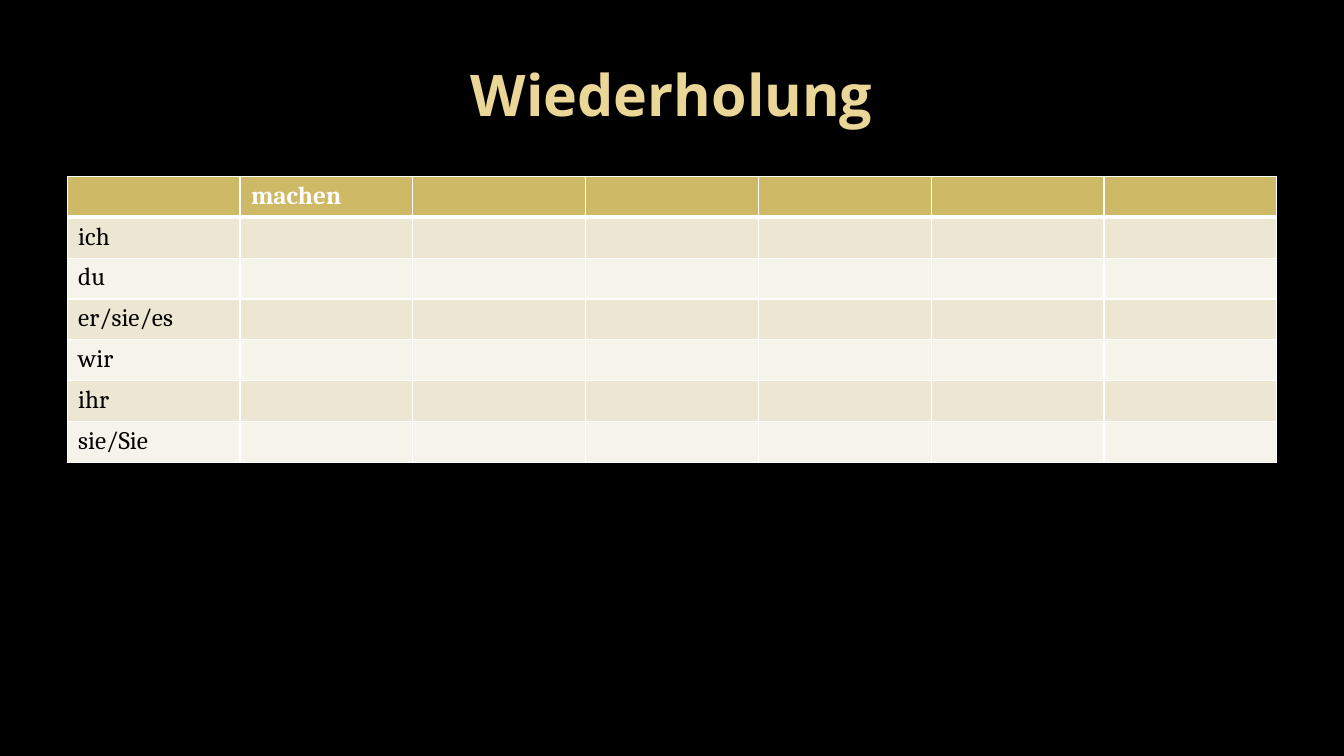
from dataclasses import dataclass

from lxml import etree
from pptx import Presentation
from pptx.dml.color import RGBColor
from pptx.enum import text
from pptx.oxml import ns
from pptx.util import Pt


@dataclass(frozen=True)
class Theme:
    background: str = "000000"
    title: str = "EAD696"
    header: str = "CEB966"
    bands: tuple = ("EDE6D3", "F6F3EA")
    header_text: str = "FFFFFF"
    body_text: str = "000000"
    grid: str = "FFFFFF"
    title_font: str = "Open Sans"
    table_font: str = "Cambria"
    title_size: int = 41
    table_size: int = 18


THEME = Theme()
VERBS = ["machen", "", "", "", "", ""]
PRONOUNS = ["ich", "du", "er/sie/es", "wir", "ihr", "sie/Sie"]


def style_font(font, name, size, color, bold):
    font.name = name
    font.size = Pt(size)
    font.bold = bold
    font.color.rgb = RGBColor.from_string(color)


def add_border(cell, side, width):
    line = etree.SubElement(cell._tc.get_or_add_tcPr(), ns.qn(f"a:ln{side}"), w=str(Pt(width)))
    fill = etree.SubElement(line, ns.qn("a:solidFill"))
    etree.SubElement(fill, ns.qn("a:srgbClr"), val=THEME.grid)


def place_title(slide, wording, left, top, width, height):
    title = slide.shapes.title
    title.left, title.top, title.width, title.height = map(Pt, (left, top, width, height))
    title.text_frame.text = wording
    title.text_frame.vertical_anchor = text.MSO_ANCHOR.MIDDLE
    heading = title.text_frame.paragraphs[0]
    heading.alignment = text.PP_ALIGN.CENTER
    style_font(heading.font, THEME.title_font, THEME.title_size, THEME.title, True)


def style_cell(cell, row):
    is_header = row == 0
    cell.margin_left = cell.margin_right = Pt(7.9)
    cell.margin_top = cell.margin_bottom = Pt(3.6)
    for side in "LRTB":
        under_header = (row, side) in ((0, "B"), (1, "T"))
        add_border(cell, side, 3 if under_header else 1)
    cell.fill.solid()
    band = THEME.header if is_header else THEME.bands[(row - 1) % 2]
    cell.fill.fore_color.rgb = RGBColor.from_string(band)
    color = THEME.header_text if is_header else THEME.body_text
    style_font(cell.text_frame.paragraphs[0].font, THEME.table_font, THEME.table_size, color, is_header)


def place_conjugation(slide, verbs, pronouns, left, top, width, height):
    rows = [["", *verbs]] + [[pronoun] + [""] * len(verbs) for pronoun in pronouns]
    frame = slide.shapes.add_table(len(rows), len(rows[0]), *map(Pt, (left, top, width, height)))
    conjugation = frame.table
    for column in conjugation.columns:
        column.width = Pt(width / len(rows[0]))
    for r, words in enumerate(rows):
        conjugation.rows[r].height = Pt(height / len(rows))
        for c, word in enumerate(words):
            cell = conjugation.cell(r, c)
            cell.text = word
            style_cell(cell, r)


def main():
    deck = Presentation()
    deck.slide_width, deck.slide_height = Pt(960), Pt(540)
    slide = deck.slides.add_slide(deck.slide_layouts[5])
    slide.background.fill.solid()
    slide.background.fill.fore_color.rgb = RGBColor.from_string(THEME.background)
    place_title(slide, "Wiederholung", 48, 21.6, 864, 90)
    place_conjugation(slide, VERBS, PRONOUNS, 48, 126, 864, 204.4)
    deck.save("out.pptx")


if __name__ == "__main__":
    main()
